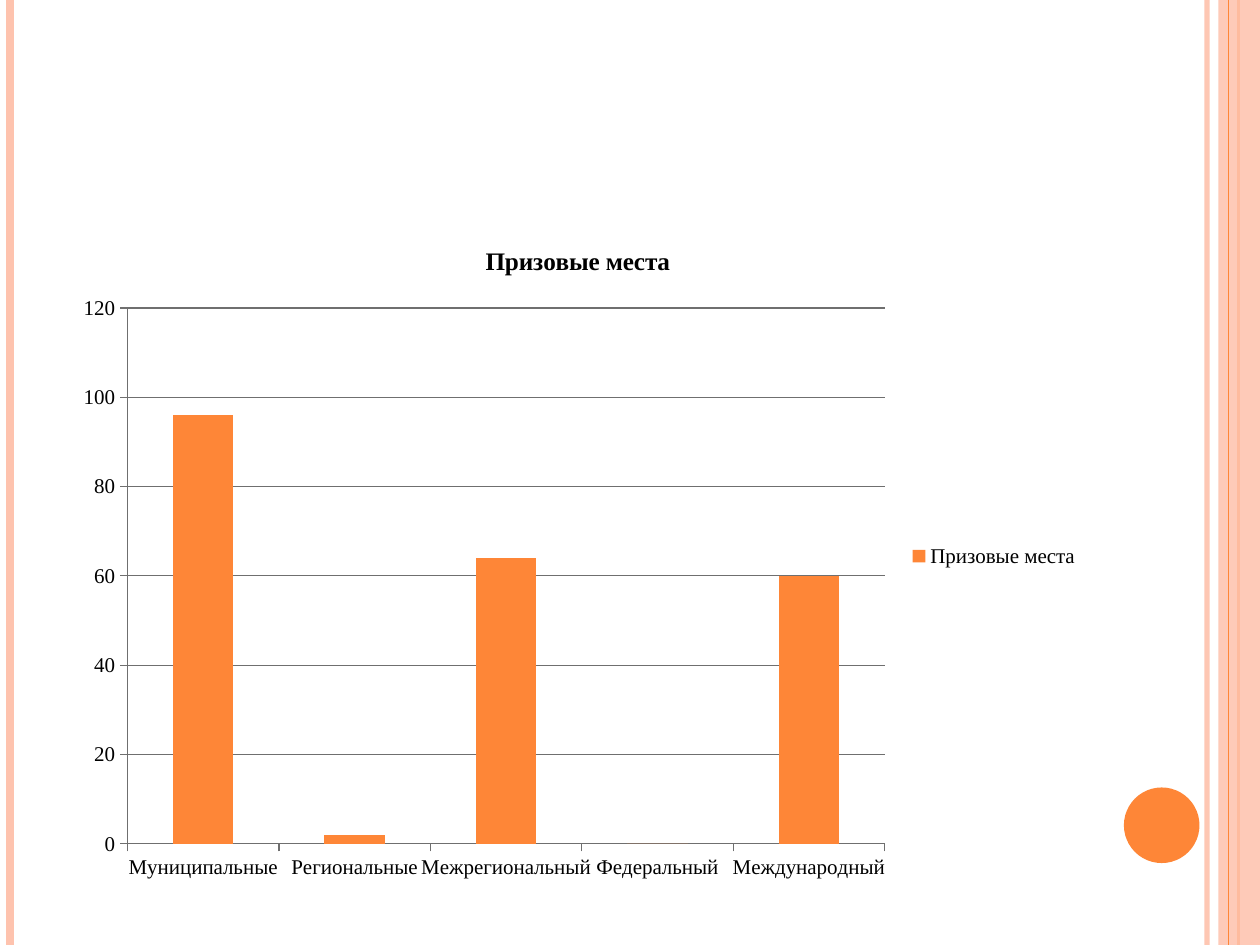
from dataclasses import dataclass

from lxml import etree
from pptx import Presentation
from pptx import util as u
from pptx.chart.data import CategoryChartData
from pptx.dml.color import RGBColor
from pptx.enum import chart as ch
from pptx.enum import shapes
from pptx.oxml import ns


@dataclass(frozen=True)
class Theme:
    font: str = "Times New Roman"
    accent: RGBColor = RGBColor(0xFE, 0x86, 0x37)
    tint: RGBColor = RGBColor(0xFE, 0xC3, 0xAE)
    text: RGBColor = RGBColor(0, 0, 0)
    axis: RGBColor = RGBColor(0x6F, 0x6F, 0x6F)
    body: float = 12
    title: float = 14.4


T = Theme()
RESULTS = {
    "Муниципальные": 96,
    "Региональные": 2,
    "Межрегиональный": 64,
    "Федеральный": 0,
    "Международный": 60,
}


def set_alpha(sp, percent):
    clr = sp._element.spPr.find(".//" + ns.qn("a:srgbClr"))
    etree.SubElement(clr, ns.qn("a:alpha")).set("val", str(percent * 1000))


def add_stripe(s, x, top, height, color, width, alpha=None):
    sp = s.shapes.add_connector(
        shapes.MSO_CONNECTOR.STRAIGHT,
        u.Inches(x), u.Inches(top), u.Inches(x), u.Inches(top + height))
    sp.line.color.rgb = color
    sp.line.width = u.Pt(width)
    etree.SubElement(sp._element.spPr, ns.qn("a:effectLst"))
    if alpha:
        set_alpha(sp, alpha)


def add_solid(s, kind, box, color, alpha=None):
    sp = s.shapes.add_shape(kind, *map(u.Inches, box))
    sp.shadow.inherit = False
    sp.fill.solid()
    sp.fill.fore_color.rgb = color
    sp.line.fill.background()
    if alpha:
        set_alpha(sp, alpha)


def add_frame(s, box):
    left, top, width, height = box
    right = left + width
    add_stripe(s, right - 0.42, top, height, T.tint, 3, 93)
    add_stripe(s, left + 0.08, top, height, T.tint, 4.5)
    add_stripe(s, right - 0.17, top, height, T.accent, 1.5)
    add_solid(s, shapes.MSO_SHAPE.RECTANGLE,
              (right - 0.33, top, 0.33, height), T.tint, 87)
    add_stripe(s, right - 0.25, top, height, T.accent, 0.75)
    add_solid(s, shapes.MSO_SHAPE.OVAL,
              (right - 1.08, top + height - 1.25, 0.6, 0.6), T.accent)


def set_font(font, size, bold=False):
    font.name = T.font
    font.size = u.Pt(size)
    font.bold = bold
    font.color.rgb = T.text


def style_axis(axis):
    axis.major_tick_mark = ch.XL_TICK_MARK.OUTSIDE
    axis.minor_tick_mark = ch.XL_TICK_MARK.NONE
    axis.format.line.color.rgb = T.axis
    axis.format.line.width = u.Pt(0.75)
    set_font(axis.tick_labels.font, T.body)


def add_results_chart(s, box, name, results):
    data = CategoryChartData()
    data.categories = list(results)
    data.add_series(name, list(results.values()))
    chart = s.shapes.add_chart(
        ch.XL_CHART_TYPE.COLUMN_CLUSTERED, *map(u.Inches, box), data).chart
    set_font(chart.font, T.body)

    chart.has_title = True
    r = chart.chart_title.text_frame.paragraphs[0].add_run()
    r.text = name
    set_font(r.font, T.title, True)
    chart.chart_title.include_in_layout = False

    chart.has_legend = True
    chart.legend.position = ch.XL_LEGEND_POSITION.RIGHT
    chart.legend.include_in_layout = False
    set_font(chart.legend.font, T.body)

    style_axis(chart.category_axis)
    style_axis(chart.value_axis)
    chart.value_axis.minimum_scale = 0
    chart.value_axis.maximum_scale = 120
    chart.value_axis.major_unit = 20
    grid = chart.value_axis.major_gridlines.format.line
    grid.color.rgb = T.axis
    grid.width = u.Pt(0.75)

    plot = chart.plots[0]
    plot.vary_by_categories = False
    plot.gap_width = 150
    fill = plot.series[0].format.fill
    fill.solid()
    fill.fore_color.rgb = T.accent


def main():
    prs = Presentation()
    prs.slide_width, prs.slide_height = u.Inches(10), u.Inches(7.5)
    s = prs.slides.add_slide(prs.slide_layouts[6])
    add_frame(s, (0, 0, 10, 7.5))
    add_results_chart(s, (0.5, 1.75, 8.17, 5.33), "Призовые места", RESULTS)
    prs.save("out.pptx")


if __name__ == "__main__":
    main()
